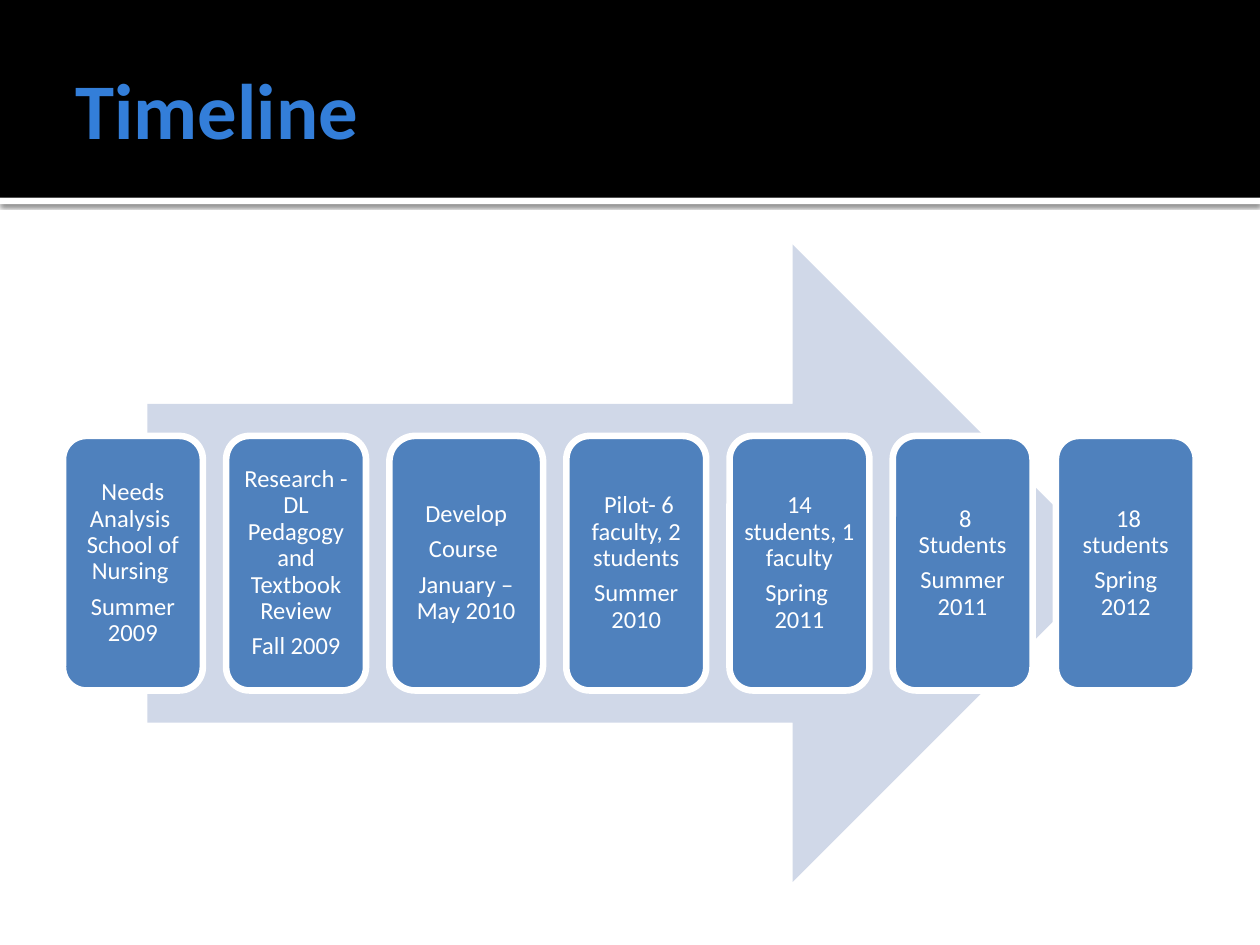
from lxml.etree import SubElement
from pptx import Presentation
from pptx.dml.color import RGBColor
from pptx.enum.shapes import MSO_SHAPE
from pptx.enum.text import MSO_ANCHOR, PP_ALIGN
from pptx.oxml.ns import qn
from pptx.util import Inches, Pt

FONT = "Calibri"
WHITE = "FFFFFF"
GAP = 0.185
STAGE_WIDTH = 1.11
WIDE_STAGE_WIDTH = 1.22
STAGES = [
    (STAGE_WIDTH, ["Needs Analysis  School of Nursing ", "Summer 2009"]),
    (STAGE_WIDTH, ["Research - DL Pedagogy and Textbook Review", "Fall 2009"]),
    (WIDE_STAGE_WIDTH, ["Develop", "Course ", "January –May 2010"]),
    (STAGE_WIDTH, [" Pilot- 6 faculty, 2 students", "Summer 2010"]),
    (STAGE_WIDTH, ["14 students, 1 faculty", "Spring  2011"]),
    (STAGE_WIDTH, [" 8 Students", "Summer 2011"]),
    (STAGE_WIDTH, [" 18 students", "Spring 2012"]),
]


def color(hex_value):
    """Return the colour for a hex string."""
    return RGBColor.from_string(hex_value)


def add_filled_shape(slide, preset, left, top, width, height, fill):
    """Add a preset shape with a plain fill and no outline."""
    shape = slide.shapes.add_shape(
        preset, Inches(left), Inches(top), Inches(width), Inches(height)
    )
    shape.shadow.inherit = False
    shape.fill.solid()
    shape.fill.fore_color.rgb = color(fill)
    shape.line.fill.background()
    return shape


def add_drop_shadow(shape):
    """Cast a soft black shadow straight down."""
    effects = shape.element.spPr.find(qn("a:effectLst"))
    shadow = SubElement(
        effects, qn("a:outerShdw"), blurRad=str(Pt(2.5)), dist=str(Pt(0.8)),
        dir="5400000", algn="tl", rotWithShape="0",
    )
    black = SubElement(shadow, qn("a:srgbClr"), val="000000")
    SubElement(black, qn("a:alpha"), val="60000")


def set_insets(frame, left, top, right, bottom):
    """Set the text margins in inches and centre the text vertically."""
    frame.margin_left, frame.margin_top = Inches(left), Inches(top)
    frame.margin_right, frame.margin_bottom = Inches(right), Inches(bottom)
    frame.vertical_anchor = MSO_ANCHOR.MIDDLE
    frame.word_wrap = True


def format_runs(paragraph, size, hex_value, bold=False):
    """Give every run of a paragraph its font."""
    for run in paragraph.runs:
        run.font.name = FONT
        run.font.size = Pt(size)
        run.font.bold = bold
        run.font.color.rgb = color(hex_value)


def add_header(slide):
    """Build the black band, its shadowed rule and the title."""
    rule = add_filled_shape(slide, MSO_SHAPE.RECTANGLE, 0, 1.57, 10, 0.05, WHITE)
    add_drop_shadow(rule)
    band = add_filled_shape(slide, MSO_SHAPE.RECTANGLE, 0, 0, 10, 1.57, "000000")

    title = slide.shapes.title
    for backdrop in (rule, band):
        title.element.addprevious(backdrop.element)
    title.left, title.top = Inches(0.5), Inches(0.17)
    title.width, title.height = Inches(9), Inches(1.37)
    title.text_frame.text = "Timeline"
    set_insets(title.text_frame, 0.1, 0.05, 0.05, 0.05)
    heading = title.text_frame.paragraphs[0]
    heading.alignment = PP_ALIGN.LEFT
    format_runs(heading, 45, "337ED9", bold=True)


def add_stage(slide, left, width, lines):
    """Add one rounded timeline stage with its centred lines."""
    stage = add_filled_shape(
        slide, MSO_SHAPE.ROUNDED_RECTANGLE, left, 3.46, width, 2.02, "4F81BD"
    )
    stage.line.color.rgb = color(WHITE)
    stage.line.width = Pt(3.78)
    stage.text_frame.text = "\n".join(lines)
    set_insets(stage.text_frame, 0.06, 0.06, 0.06, 0.06)
    for paragraph in stage.text_frame.paragraphs:
        paragraph.alignment = PP_ALIGN.CENTER
        paragraph.line_spacing = 0.9
        paragraph.space_after = Pt(5)
        format_runs(paragraph, 14, WHITE)


def add_timeline(slide):
    """Lay the stages from left to right over the arrow."""
    add_filled_shape(slide, MSO_SHAPE.RIGHT_ARROW, 1.17, 1.94, 7.65, 5.06, "D0D8E8")
    left = 0.5
    for width, lines in STAGES:
        add_stage(slide, left, width, lines)
        left += width + GAP


def main():
    """Build and save the timeline slide."""
    presentation = Presentation()
    presentation.slide_width = Inches(10)
    presentation.slide_height = Inches(7.5)
    slide = presentation.slides.add_slide(presentation.slide_layouts[5])
    add_header(slide)
    add_timeline(slide)
    presentation.save("out.pptx")


if __name__ == "__main__":
    main()
